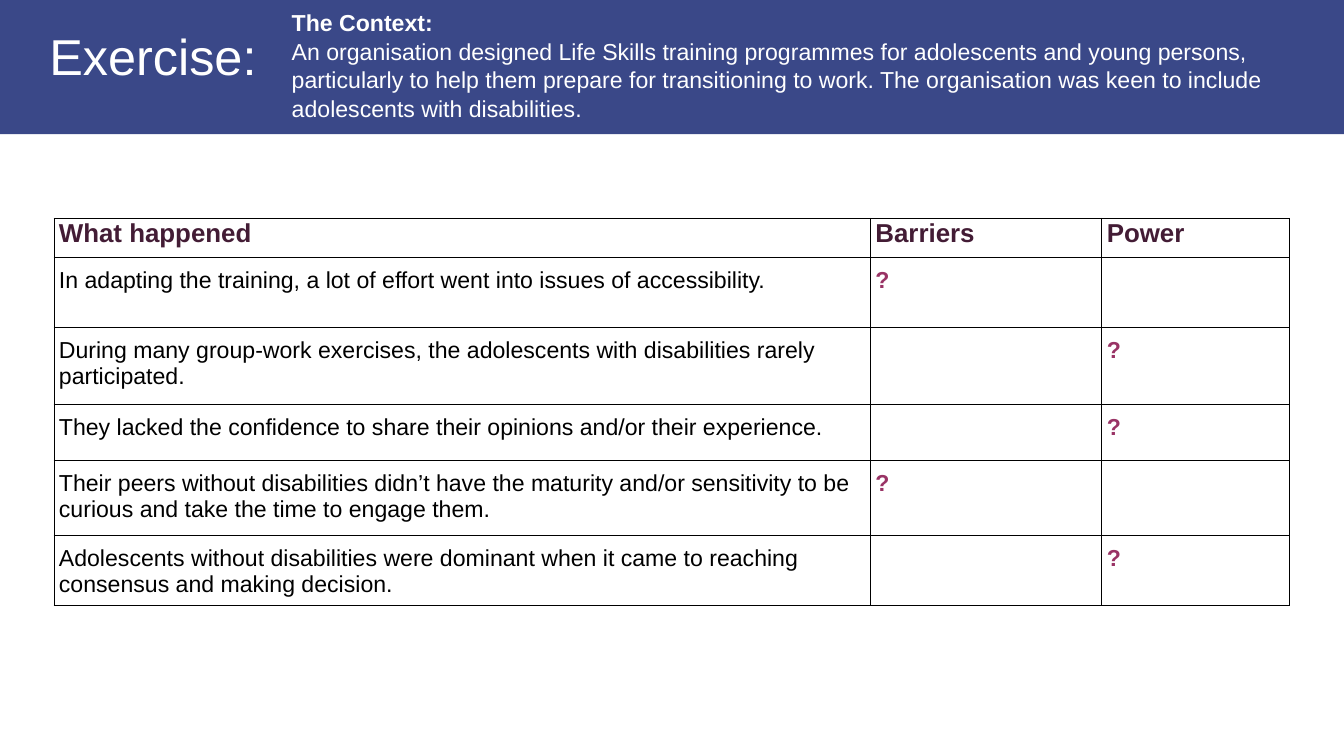
from dataclasses import dataclass

from lxml import etree
from pptx import Presentation
from pptx.dml.color import RGBColor
from pptx.enum.shapes import MSO_SHAPE
from pptx.enum.text import MSO_ANCHOR
from pptx.oxml.ns import qn
from pptx.util import Pt

RECTANGLE = MSO_SHAPE.RECTANGLE
TOP, MIDDLE = MSO_ANCHOR.TOP, MSO_ANCHOR.MIDDLE


@dataclass(frozen=True)
class Theme:
    font: str = "Arial"
    banner: str = "3A4888"
    light: str = "FFFFFF"
    ink: str = "000000"
    header: str = "431C35"
    mark: str = "993365"
    title_size: int = 72
    header_size: int = 37
    body_size: int = 33


THEME = Theme()

CONTEXT_HEADING = "The Context:"
CONTEXT = (
    "An organisation designed Life Skills training programmes for adolescents and "
    "young persons, particularly to help them prepare for transitioning to work. "
    "The organisation was keen to include adolescents with disabilities."
)

HEADINGS = ("What happened", "Barriers", "Power")
COLUMN_WIDTHS = (1166.4, 330.5, 268.6)
HEADER_HEIGHT = 55.4
# Event, the column its mark falls in, row height
EVENTS = (
    ("In adapting the training, a lot of effort went into issues of accessibility.",
     "Barriers", 100),
    ("During many group-work exercises, the adolescents with disabilities rarely "
     "participated.", "Power", 110),
    ("They lacked the confidence to share their opinions and/or their experience.",
     "Power", 80.6),
    ("Their peers without disabilities didn’t have the maturity and/or sensitivity "
     "to be curious and take the time to engage them.", "Barriers", 106.6),
    ("Adolescents without disabilities were dominant when it came to reaching "
     "consensus and making decision.", "Power", 100),
)


def write(paragraph, words, size, color, bold=False, spacing=1.0):
    paragraph.line_spacing = spacing
    run = paragraph.add_run()
    run.text = words
    font_format = {"name": THEME.font, "size": Pt(size), "bold": bold}
    for attribute, value in font_format.items():
        setattr(run.font, attribute, value)
    run.font.color.rgb = RGBColor.from_string(color)


def add_text_frame(slide, left, top, width, height, anchor):
    frame = slide.shapes.add_textbox(Pt(left), Pt(top), Pt(width), Pt(height)).text_frame
    frame.word_wrap = True
    frame.vertical_anchor = anchor
    return frame


def add_borders(cell):
    properties = cell._tc.get_or_add_tcPr()
    for position, side in enumerate(("a:lnL", "a:lnR", "a:lnT", "a:lnB")):
        line = etree.Element(qn(side), w=str(Pt(1)))
        fill = etree.SubElement(line, qn("a:solidFill"))
        etree.SubElement(fill, qn("a:srgbClr"), val=THEME.ink)
        properties.insert(position, line)


def build_banner(slide, left, top, width, height):
    # Coloured band
    band = slide.shapes.add_shape(RECTANGLE, Pt(left), Pt(top), Pt(width), Pt(height))
    band.shadow.inherit = False
    band.fill.solid()
    band.fill.fore_color.rgb = RGBColor.from_string(THEME.banner)
    band.line.fill.background()

    # Title
    title = add_text_frame(slide, left + 63.4, top + 23, 765.4, 123.8, MIDDLE)
    write(title.paragraphs[0], "Exercise:", THEME.title_size, THEME.light, spacing=0.9)

    # Context
    context = add_text_frame(slide, left + 409.7, top + 6.5, 1485.4, 167, TOP)
    write(context.paragraphs[0], CONTEXT_HEADING, THEME.body_size, THEME.light, bold=True,
          spacing=1.04)
    write(context.add_paragraph(), CONTEXT, THEME.body_size, THEME.light, spacing=1.04)


def build_event_table(slide, left, top):
    heights = [HEADER_HEIGHT] + [height for _, _, height in EVENTS]
    table = slide.shapes.add_table(
        len(heights), len(HEADINGS), Pt(left), Pt(top),
        Pt(sum(COLUMN_WIDTHS)), Pt(sum(heights))).table
    for column, width in zip(table.columns, COLUMN_WIDTHS):
        column.width = Pt(width)
    for row, height in zip(table.rows, heights):
        row.height = Pt(height)

    # Plain bordered cells
    for row_index, row in enumerate(table.rows):
        cell_format = {
            "margin_left": Pt(7.2), "margin_right": Pt(7.2), "margin_bottom": 0,
            "margin_top": Pt(15 if row_index else 0.7),
        }
        for cell in row.cells:
            for attribute, value in cell_format.items():
                setattr(cell, attribute, value)
            cell.fill.background()
            add_borders(cell)

    # Header row
    for column_index, heading in enumerate(HEADINGS):
        write(table.cell(0, column_index).text_frame.paragraphs[0], heading,
              THEME.header_size, THEME.header, bold=True)

    # Events and their marks
    for row_index, (event, marked, _) in enumerate(EVENTS, start=1):
        write(table.cell(row_index, 0).text_frame.paragraphs[0], event,
              THEME.body_size, THEME.ink)
        mark_cell = table.cell(row_index, HEADINGS.index(marked))
        write(mark_cell.text_frame.paragraphs[0], "?",
              THEME.body_size, THEME.mark, bold=True)


def main():
    presentation = Presentation()
    presentation.slide_width, presentation.slide_height = Pt(1920), Pt(1080)
    slide = presentation.slides.add_slide(presentation.slide_layouts[6])
    build_banner(slide, 0, 0, 1920, 191.5)
    build_event_table(slide, 77, 311.8)
    presentation.save("out.pptx")


if __name__ == "__main__":
    main()
